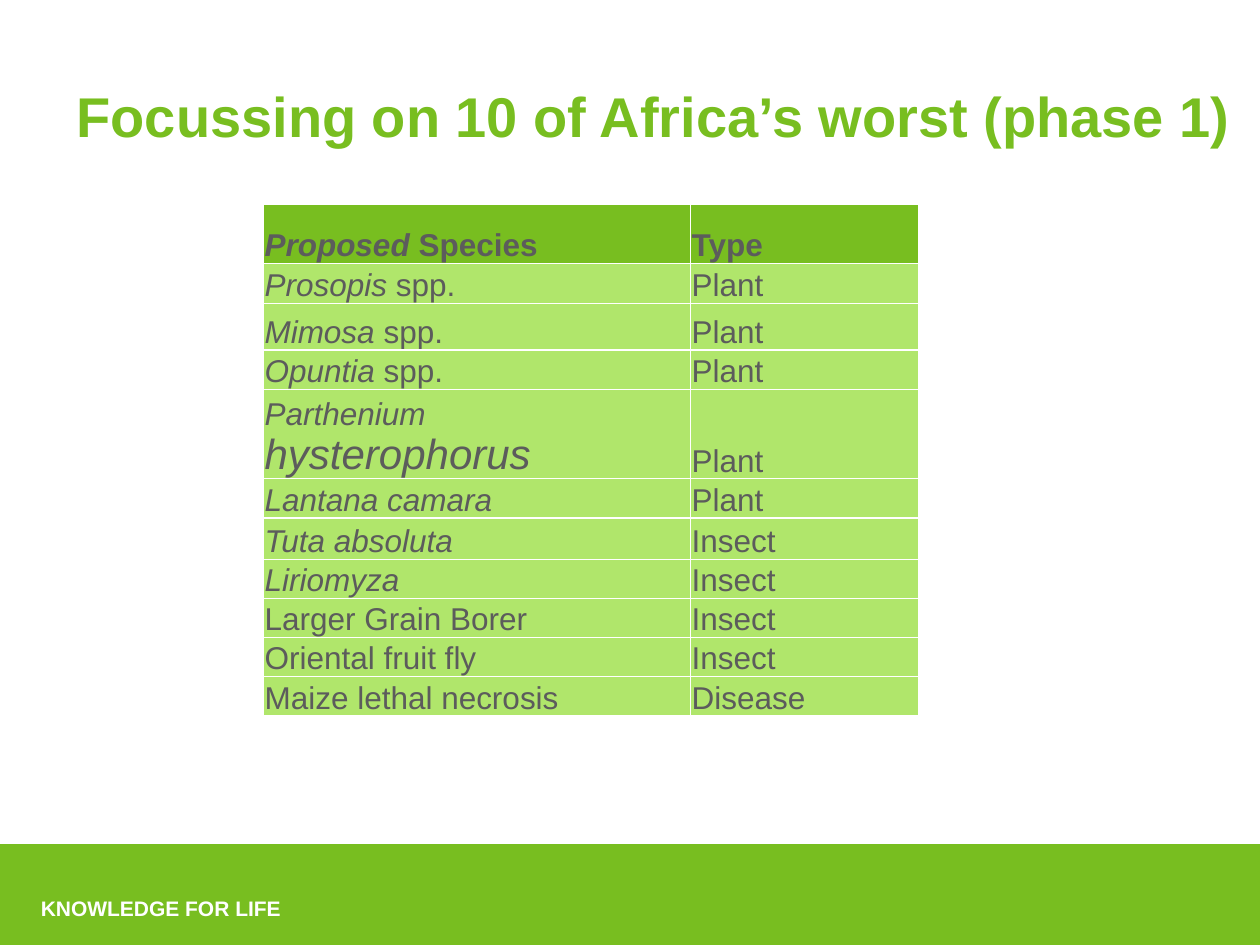
import lxml.etree
import pptx
import pptx.dml.color
import pptx.enum.shapes
import pptx.enum.text
import pptx.oxml.ns
import pptx.util

Inches = pptx.util.Inches
Pt = pptx.util.Pt
Anchor = pptx.enum.text.MSO_ANCHOR
Align = pptx.enum.text.PP_ALIGN

GREEN, PALE_GREEN, GREY, WHITE = "78BE20", "B0E66B", "5C5C5C", "FFFFFF"
WIDTH, HEIGHT = 10, 7.5
COLUMN_WIDTHS = [3.39, 1.81]
ROW_HEIGHTS = [0.47, 0.32, 0.37, 0.31, 0.31, 0.31, 0.33, 0.31, 0.31, 0.31, 0.31]

# Italic part of the name, upright part, type
SPECIES = [
    ("Proposed ", "Species", "Type"),
    ("Prosopis ", "spp.", "Plant"),
    ("Mimosa ", "spp.", "Plant"),
    ("Opuntia ", "spp.", "Plant"),
    ("Parthenium hysterophorus", "", "Plant"),
    ("Lantana camara", "", "Plant"),
    ("Tuta absoluta", "", "Insect"),
    ("Liriomyza", "", "Insect"),
    ("", "Larger Grain Borer", "Insect"),
    ("", "Oriental fruit fly", "Insect"),
    ("", "Maize lethal necrosis", "Disease"),
]
ENLARGED_WORD = "hysterophorus"


def colour(value):
    return pptx.dml.color.RGBColor.from_string(value)


def style_font(font, size, value, bold):
    font.name = "Arial"
    font.size = Pt(size)
    font.bold = bold
    font.color.rgb = colour(value)


def add_label(page, box, text, size, value, wrap=True):
    label = page.shapes.add_textbox(*map(Inches, box))
    label.text_frame.word_wrap = wrap
    paragraph = label.text_frame.paragraphs[0]
    paragraph.add_run().text = text
    style_font(paragraph.font, size, value, True)
    return label


def add_title(page, box):
    title = add_label(page, box, "Focussing on 10 of Africa’s worst (phase 1)", 32, GREEN)
    title.text_frame.vertical_anchor = Anchor.MIDDLE


def add_footer(page, box):
    left, top, width, height = box
    band = page.shapes.add_shape(
        pptx.enum.shapes.MSO_SHAPE.RECTANGLE, *map(Inches, box))
    band.shadow.inherit = False
    band.fill.solid()
    band.fill.fore_color.rgb = colour(GREEN)
    band.line.fill.background()
    motto_box = (left + 0.02 * width, top + 0.36, 2.13, 0.3)
    motto = add_label(page, motto_box, "KNOWLEDGE FOR LIFE", 12, WHITE, wrap=False)
    paragraph = motto.text_frame.paragraphs[0]
    paragraph.alignment = Align.RIGHT
    paragraph.space_after = Pt(3)


def add_borders(cell):
    properties = cell._tc.get_or_add_tcPr()
    qn = pptx.oxml.ns.qn
    for side in ("a:lnL", "a:lnR", "a:lnT", "a:lnB"):
        line = lxml.etree.SubElement(properties, qn(side), w=str(Pt(1)))
        fill = lxml.etree.SubElement(line, qn("a:solidFill"))
        lxml.etree.SubElement(fill, qn("a:srgbClr"), val=WHITE)


def fill_cell(cell, spans, header):
    """Write spans of (text, italic) into a bordered, filled cell."""
    cell.vertical_anchor = Anchor.BOTTOM
    cell.margin_left = cell.margin_right = cell.margin_top = Inches(0.01)
    cell.margin_bottom = 0
    add_borders(cell)
    cell.fill.solid()
    cell.fill.fore_color.rgb = colour(GREEN if header else PALE_GREEN)
    paragraph = cell.text_frame.paragraphs[0]
    for text, italic in spans:
        if text:
            span = paragraph.add_run()
            span.text = text
            span.font.italic = italic
            style_font(span.font, 24 if text == ENLARGED_WORD else 18, GREY, header)


def name_spans(italic_part, upright_part):
    before, word, after = italic_part.partition(ENLARGED_WORD)
    return [(before, True), (word, True), (after, True), (upright_part, False)]


def add_species_table(page, left, top):
    frame = page.shapes.add_table(
        len(SPECIES), len(COLUMN_WIDTHS), Inches(left), Inches(top),
        Inches(sum(COLUMN_WIDTHS)), Inches(sum(ROW_HEIGHTS)))
    table = frame.table
    for column, width in zip(table.columns, COLUMN_WIDTHS):
        column.width = Inches(width)
    for index, (italic_part, upright_part, kind) in enumerate(SPECIES):
        table.rows[index].height = Inches(ROW_HEIGHTS[index])
        header = index == 0
        fill_cell(table.cell(index, 0), name_spans(italic_part, upright_part), header)
        fill_cell(table.cell(index, 1), [(kind, False)], header)


def main():
    deck = pptx.Presentation()
    deck.slide_width, deck.slide_height = Inches(WIDTH), Inches(HEIGHT)
    page = deck.slides.add_slide(deck.slide_layouts[6])
    add_footer(page, (0, 6.7, WIDTH, 0.83))
    add_title(page, (0.51, 0.29, WIDTH - 0.51, 1.25))
    add_species_table(page, 2.09, 1.62)
    deck.save("out.pptx")


if __name__ == "__main__":
    main()
